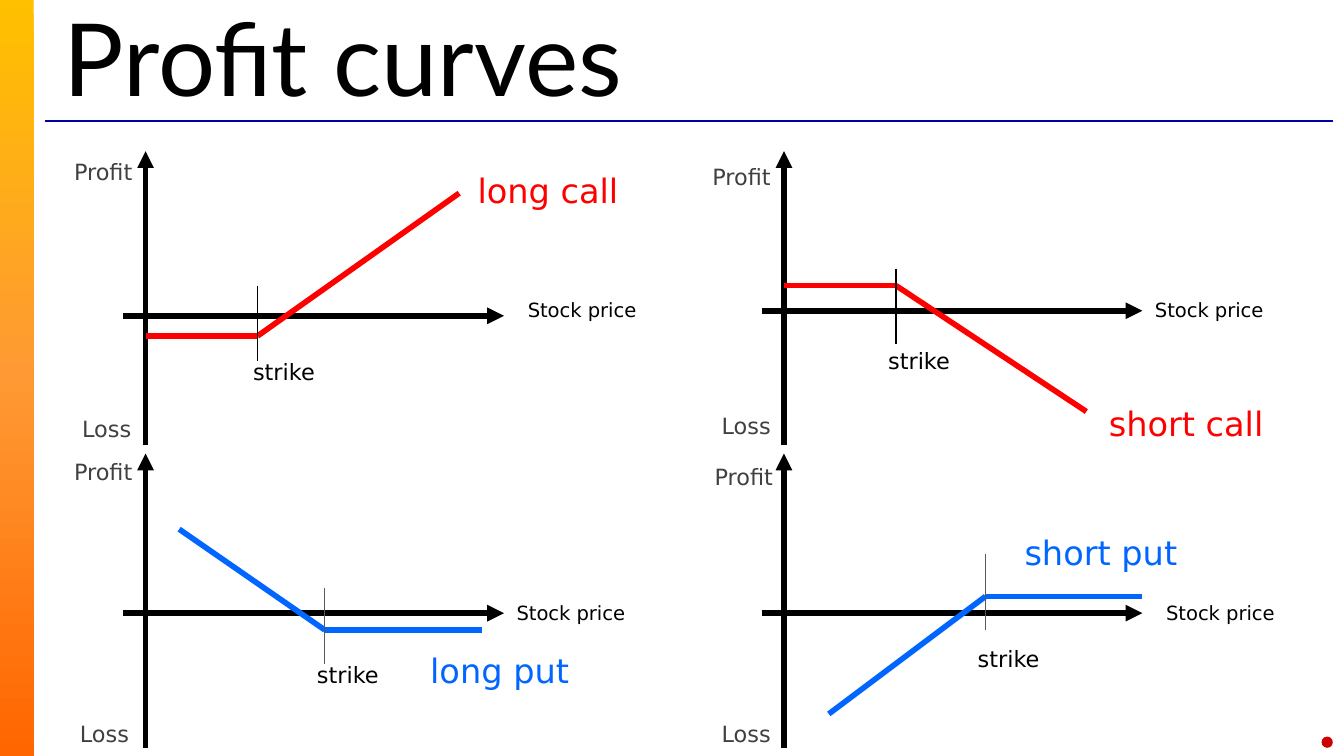
from copy import deepcopy
from dataclasses import dataclass

from pptx import Presentation
from pptx import util as u
from pptx.dml.color import RGBColor
from pptx.enum import shapes, text
from pptx.oxml.ns import qn
from lxml import etree

# Grid: 120 columns by 90 rows over the slide
WIDTH, HEIGHT = u.Inches(10), u.Inches(5.625)
COLUMNS, ROWS = 120, 90
AXIS_LEFT, AXIS_RIGHT, AXIS_HEIGHT = -2, 32, 35

COLORS = {
    "black": "000000", "gray": "404040", "tick": "595959",
    "call": "FF0000", "put": "0066FF", "rule": "0000A5", "dot": "CC0000",
}
SIDEBAR_STOPS = [(0, "FFC000"), (0.5, "FF9933"), (1, "FF6600")]


@dataclass
class Label:
    """Right-aligned text; right edge and top are grid offsets in a panel."""
    words: str
    right: float
    top: float
    width: float
    height: float
    size: float
    color: str


@dataclass
class Panel:
    """One profit diagram; inner positions count from the top of its axis."""
    name: str
    kind: str
    column: float
    row: float
    zero: float
    payoff: list
    strike: tuple  # column, first row, last row
    tick_color: str
    name_at: tuple
    strike_at: tuple
    profit_at: tuple
    loss_at: tuple
    stock_right: float

    def labels(self) -> list:
        return [
            Label("Profit", *self.profit_at, 9, 4.8, 12, "gray"),
            Label("Loss", *self.loss_at, 9, 4.8, 12, "gray"),
            Label("Stock price", self.stock_right, 16.7, 13, 4.6, 10.5, "black"),
            Label("strike", *self.strike_at, 13, 4.8, 12, "black"),
            Label(self.name, *self.name_at, 18, 6.4, 18, self.kind),
        ]


PANELS = [
    Panel("long call", "call", 13, 18, 19.6, [(0, 22), (10, 22), (28, 5)],
          (10, 16, 25), "black", (43.4, 1.4), (16.3, 23.9), (0, 0), (-0.1, 30.6), 45),
    Panel("short call", "call", 70, 18, 19, [(0, 16), (10, 16), (27, 31)],
          (10, 14, 23), "black", (44, 29.2), (16, 22.6), (0, 0.6), (0, 30.3), 44),
    Panel("long put", "put", 13, 54, 19, [(3, 9), (16, 21), (30, 21)],
          (16, 16, 25), "tick", (39, 22.6), (22, 23.9), (0, -0.2), (-0.3, 31), 44),
    Panel("short put", "put", 70, 54, 19, [(4, 31), (18, 17), (32, 17)],
          (18, 12, 21), "tick", (36.3, 8.6), (24, 22), (0.2, 0.4), (0, 31), 45),
]


def col(count: float) -> int:
    return round(WIDTH * count / COLUMNS)


def row(count: float) -> int:
    return round(HEIGHT * count / ROWS)


def rgb(name: str) -> RGBColor:
    return RGBColor.from_string(COLORS[name])


def apply(target, values: dict) -> None:
    for name, value in values.items():
        setattr(target, name, value)


def draw_line(parent, start: tuple, end: tuple, color: str, points: float,
              arrow: bool = False) -> None:
    line = parent.add_connector(shapes.MSO_CONNECTOR.STRAIGHT, col(start[0]), row(start[1]),
                                col(end[0]), row(end[1]))
    line.line.color.rgb = rgb(color)
    line.line.width = u.Pt(points)
    properties = line._element.spPr
    if arrow:
        etree.SubElement(properties.find(qn("a:ln")), qn("a:tailEnd"), type="triangle")
    etree.SubElement(properties, qn("a:effectLst"))


def draw_label(parent, panel: Panel, label: Label) -> None:
    box = parent.add_textbox(col(panel.column + label.right - label.width),
                             row(panel.row + label.top), col(label.width), row(label.height))
    box.text_frame.word_wrap = True
    para = box.text_frame.paragraphs[0]
    para.alignment = text.PP_ALIGN.RIGHT
    span = para.add_run()
    span.text = label.words
    apply(span.font, {"name": "DejaVu Sans", "size": u.Pt(label.size)})
    span.font.color.rgb = rgb(label.color)


def draw_panel(page, panel: Panel) -> None:
    parent = page.shapes.add_group_shape().shapes

    def place(column: float, line: float) -> tuple:
        return panel.column + column, panel.row + line

    # Axes
    draw_line(parent, place(0, AXIS_HEIGHT), place(0, 0), "black", 3, arrow=True)
    draw_line(parent, place(AXIS_LEFT, panel.zero), place(AXIS_RIGHT, panel.zero),
              "black", 3, arrow=True)
    # Payoff and strike
    for start, end in zip(panel.payoff, panel.payoff[1:]):
        draw_line(parent, place(*start), place(*end), panel.kind, 3)
    strike, first, last = panel.strike
    draw_line(parent, place(strike, first), place(strike, last), panel.tick_color, 0.75)
    for label in panel.labels():
        draw_label(parent, panel, label)


def draw_frame(page) -> None:
    # Gradient sidebar
    bar = page.shapes.add_shape(shapes.MSO_SHAPE.RECTANGLE, 0, 0, col(3), HEIGHT)
    bar.shadow.inherit = False
    bar.line.fill.background()
    bar.fill.gradient()
    bar.fill.gradient_angle = 270
    stop_list = bar._element.spPr.find(qn("a:gradFill")).find(qn("a:gsLst"))
    stop_list.append(deepcopy(stop_list[-1]))
    for stop, (position, color) in zip(bar.fill.gradient_stops, SIDEBAR_STOPS):
        stop.position = position
        stop.color.rgb = RGBColor.from_string(color)

    # Rule under the title and corner dot
    draw_line(page.shapes, (4, 14.4), (119, 14.4), "rule", 0.75)
    dot = page.shapes.add_shape(shapes.MSO_SHAPE.OVAL, col(118), row(87.7), col(1), col(1))
    dot.shadow.inherit = False
    dot.fill.solid()
    dot.fill.fore_color.rgb = rgb("dot")
    dot.line.fill.background()


def draw_title(page) -> None:
    title = page.shapes.title
    apply(title, {"left": col(4.5), "top": row(2.4), "width": col(115), "height": row(8.5)})
    apply(title.text_frame, {"text": "Profit curves", "word_wrap": True,
                             "auto_size": text.MSO_AUTO_SIZE.NONE,
                             "vertical_anchor": text.MSO_ANCHOR.MIDDLE})
    para = title.text_frame.paragraphs[0]
    para.alignment = text.PP_ALIGN.LEFT
    font = para.runs[0].font
    apply(font, {"name": "Lato", "size": u.Pt(54)})
    font.color.rgb = rgb("black")


def main() -> None:
    deck = Presentation()
    apply(deck, {"slide_width": WIDTH, "slide_height": HEIGHT})
    page = deck.slides.add_slide(deck.slide_layouts[5])
    draw_frame(page)
    draw_title(page)
    for panel in PANELS:
        draw_panel(page, panel)
    deck.save("out.pptx")


if __name__ == "__main__":
    main()
